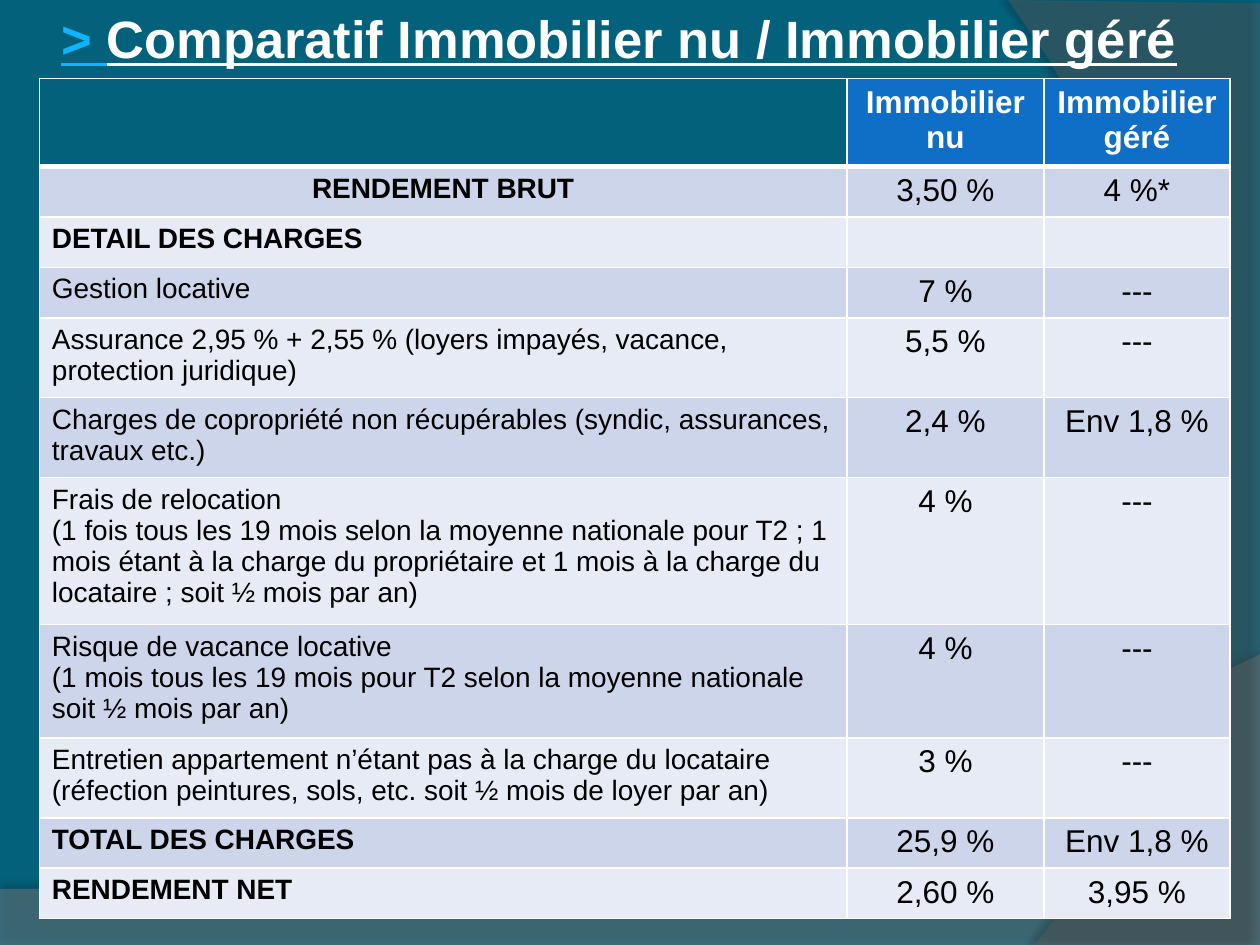
import pptx
import pptx.util
import pptx.dml.color
import pptx.enum.text
import pptx.oxml
import pptx.oxml.ns
import lxml.etree
from dataclasses import dataclass

Pt = pptx.util.Pt
qn = pptx.oxml.ns.qn
Align = pptx.enum.text.PP_ALIGN


@dataclass(frozen=True)
class Theme:
    font: str = "Arial"
    back: str = "04617B"
    wave: str = "7F7F7F"
    side: str = "5E5E5E"
    mark: str = "0DB4FF"
    white: str = "FFFFFF"
    black: str = "000000"
    head: str = "0F6FC6"
    bands: tuple = ("CCD5EA", "E7EBF5")
    title: int = 30
    value: int = 18
    label: int = 16


THEME = Theme()

COLS = (461.5, 112.5, 106.5)
# Height, label, bare value, managed value
ROWS = (
    (49, "", "Immobilier nu", "Immobilier géré"),
    (28, "RENDEMENT BRUT", "3,50 %", "4 %*"),
    (28, "DETAIL DES CHARGES", "", ""),
    (28, "Gestion locative", "7 %", "---"),
    (44.5, "Assurance 2,95 % + 2,55 % (loyers impayés, vacance, "
     "protection juridique)", "5,5 %", "---"),
    (44.5, "Charges de copropriété non récupérables (syndic, assurances, "
     "travaux etc.)", "2,4 %", "Env 1,8 %"),
    (82, "Frais de relocation\n(1 fois tous les 19 mois selon la moyenne "
     "nationale pour T2 ; 1 mois étant à la charge du propriétaire et 1 mois "
     "à la charge du locataire ; soit ½ mois par an)", "4 %", "---"),
    (63.5, "Risque de vacance locative\n(1 mois tous les 19 mois pour T2 selon "
     "la moyenne nationale soit ½ mois par an)", "4 %", "---"),
    (44.5, "Entretien appartement n’étant pas à la charge du locataire\n"
     "(réfection peintures, sols, etc. soit ½ mois de loyer par an)",
     "3 %", "---"),
    (28, "TOTAL DES CHARGES", "25,9 %", "Env 1,8 %"),
    (28, "RENDEMENT NET", "2,60 %", "3,95 %"),
)


def rgb(code):
    return pptx.dml.color.RGBColor.from_string(code)


def style(run, size, color, bold=False, line=False):
    font = run.font
    font.name, font.size, font.bold = THEME.font, Pt(size), bold
    font.color.rgb = rgb(color)
    if line:
        font.underline = True


def curve(start, one, two, end, steps=40):
    """Points along a cubic curve, without its start."""
    def at(t, axis):
        u = 1 - t
        return (u**3 * start[axis] + 3 * u * u * t * one[axis]
                + 3 * u * t * t * two[axis] + t**3 * end[axis])
    return [(at(i / steps, 0), at(i / steps, 1)) for i in range(1, steps + 1)]


def blob(slide, points, color, alpha, shade):
    """Translucent outline with a soft shadow: alpha, blur, distance, angle."""
    form = slide.shapes.build_freeform(*points[0], scale=Pt(1))
    form.add_line_segments(points[1:], close=True)
    shape = form.convert_to_shape()
    shape.line.fill.background()
    shape.fill.solid()
    shape.fill.fore_color.rgb = rgb(color)
    tint = shape._element.spPr.find(".//" + qn("a:srgbClr"))
    lxml.etree.SubElement(tint, qn("a:alpha"), val=str(alpha * 1000))
    shape.shadow.inherit = False
    list_ = shape._element.spPr.find(qn("a:effectLst"))
    depth, blur, dist, angle = shade
    cast = lxml.etree.SubElement(
        list_, qn("a:outerShdw"), blurRad=str(Pt(blur)), dist=str(Pt(dist)),
        dir=str(angle * 60000), algn="ctr", rotWithShape="0")
    dark = lxml.etree.SubElement(cast, qn("a:srgbClr"), val=THEME.black)
    lxml.etree.SubElement(dark, qn("a:alpha"), val=str(depth * 1000))


def title(slide):
    box = slide.shapes.add_textbox(Pt(28), Pt(0), Pt(672.5), Pt(540))
    box.text_frame.word_wrap = True
    para = box.text_frame.paragraphs[0]
    para.space_before = Pt(3)
    for text, color in (("> ", THEME.mark),
                        ("Comparatif Immobilier nu / Immobilier géré",
                         THEME.white)):
        run = para.add_run()
        run.text = text
        style(run, THEME.title, color, bold=True, line=True)


def edge(cell, top, bottom):
    """White borders, placed ahead of the cell's fill."""
    props = cell._tc.get_or_add_tcPr()
    sides = (("L", 1), ("R", 1), ("T", top), ("B", bottom))
    for spot, (side, width) in enumerate(sides):
        line = lxml.etree.Element(qn("a:ln" + side), w=str(Pt(width)))
        fill = lxml.etree.SubElement(line, qn("a:solidFill"))
        lxml.etree.SubElement(fill, qn("a:srgbClr"), val=THEME.white)
        props.insert(spot, line)


def fill(cell, text, row, col):
    head = row == 0
    if head and col == 0:
        cell.fill.background()
    else:
        cell.fill.solid()
        cell.fill.fore_color.rgb = rgb(
            THEME.head if head else THEME.bands[(row - 1) % 2])
    edge(cell, 3 if row == 1 else 1, 3 if head else 1)
    cell.text_frame.text = text
    # Labels in capitals are the bold ones
    bold = head or (col == 0 and text.isupper())
    for para in cell.text_frame.paragraphs:
        if col or row == 1:
            para.alignment = Align.CENTER
        for run in para.runs:
            style(run, THEME.value if col else THEME.label,
                  THEME.white if head else THEME.black, bold)


def grid(slide):
    high = sum(row[0] for row in ROWS)
    table = slide.shapes.add_table(len(ROWS), len(COLS), Pt(22.5), Pt(44.75),
                                   Pt(sum(COLS)), Pt(high)).table
    for col, width in enumerate(COLS):
        table.columns[col].width = Pt(width)
    for row, (height, *texts) in enumerate(ROWS):
        table.rows[row].height = Pt(height)
        for col, text in enumerate(texts):
            fill(table.cell(row, col), text, row, col)


def main():
    deck = pptx.Presentation()
    deck.slide_width, deck.slide_height = Pt(720), Pt(540)
    slide = deck.slides.add_slide(deck.slide_layouts[6])
    slide.background.fill.solid()
    slide.background.fill.fore_color.rgb = rgb(THEME.back)

    # Backdrop: low wave, then right-hand sweep
    wave = [(0, 507.5), (0, 540.5), (720, 540.5), (720, 374.5)]
    wave += curve(wave[-1], (402.5, 525), (281.5, 517.5), wave[0])
    blob(slide, wave, THEME.wave, 45, (35, 4, 3.5, 270))
    side = [(720, 1.5), (720, 540), (591, 540)]
    side += curve(side[-1], (673, 445.5), (733, 216), (576, 0))
    blob(slide, side, THEME.side, 40, (45, 4, 4, 180))

    # Content
    title(slide)
    grid(slide)
    deck.save("out.pptx")


if __name__ == "__main__":
    main()
